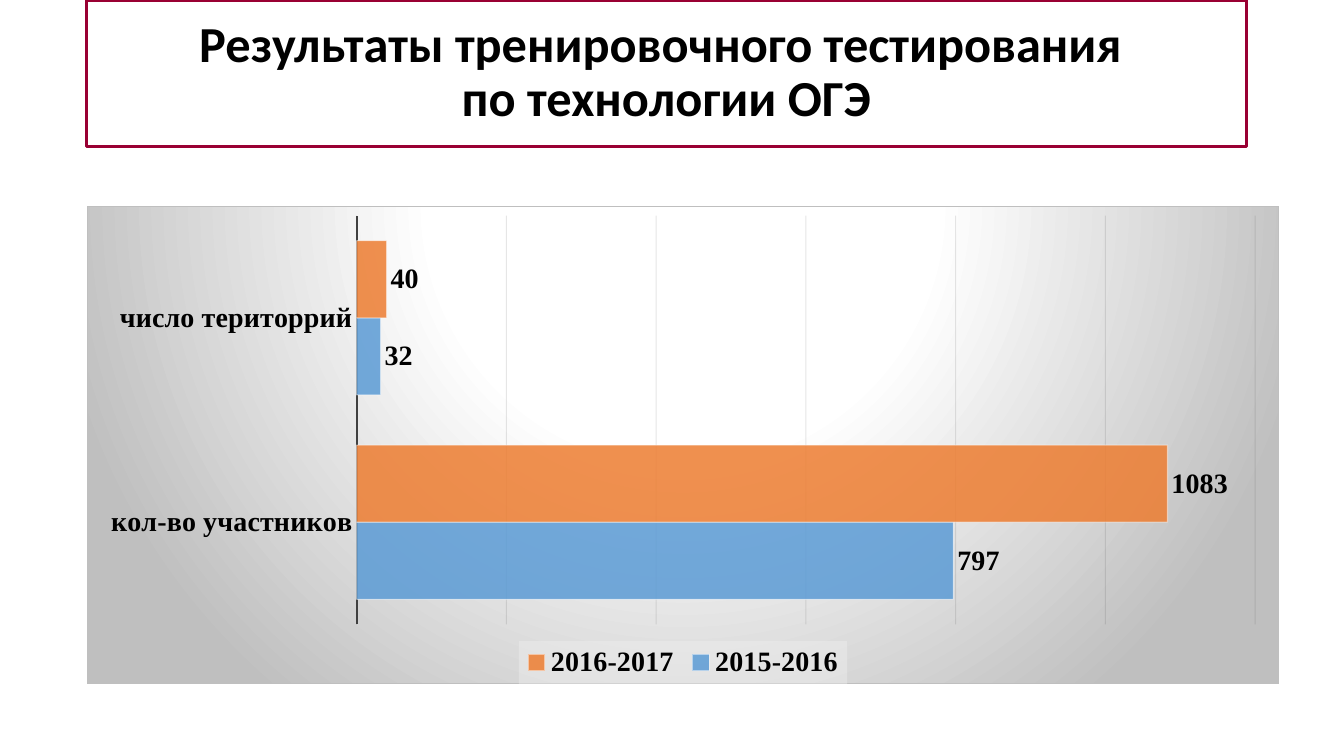
from lxml import etree
from pptx import Presentation
from pptx import util as u
from pptx.chart.data import CategoryChartData
from pptx.dml.color import RGBColor
from pptx.enum import chart as ch, text
from pptx.oxml import parse_xml
from pptx.oxml.ns import nsdecls, qn

BLACK = RGBColor(0x00, 0x00, 0x00)
WHITE = RGBColor(0xFF, 0xFF, 0xFF)
CRIMSON = RGBColor(0x99, 0x00, 0x33)
AXIS = RGBColor(0x40, 0x40, 0x40)
GRID = RGBColor(0x0D, 0x0D, 0x0D)
SILVER = RGBColor(0xBF, 0xBF, 0xBF)
PALE = RGBColor(0xF2, 0xF2, 0xF2)
BLUE = RGBColor(0x5B, 0x9B, 0xD5)
ORANGE = RGBColor(0xED, 0x7D, 0x31)

CHART_FONT = {"name": "Times New Roman", "size": u.Pt(20), "bold": True}
TITLE_FONT = {"name": "Calibri", "size": u.Pt(36), "bold": True}


def set_font(font, values):
    for key, value in values.items():
        setattr(font, key, value)
    font.color.rgb = BLACK


def set_alpha(parent, percent):
    """Make the solid colours under an XML element partly opaque."""
    for clr in parent.iter(qn("a:srgbClr")):
        etree.SubElement(clr, qn("a:alpha")).set("val", str(percent * 1000))


prs = Presentation()
prs.slide_width, prs.slide_height = u.Inches(13.33), u.Inches(7.5)
s = prs.slides.add_slide(prs.slide_layouts[5])
left = u.Inches(0.86)

# Title
sp = s.shapes.title
sp.left, sp.top, sp.width, sp.height = left, 0, u.Inches(11.5), u.Inches(1.45)
sp.line.color.rgb = CRIMSON
sp.line.width = u.Pt(2.25)
tf = sp.text_frame
tf.word_wrap = True
tf.auto_size = text.MSO_AUTO_SIZE.NONE
tf.vertical_anchor = text.MSO_ANCHOR.MIDDLE
p = tf.paragraphs[0]
p.text = "Результаты тренировочного тестирования \vпо технологии ОГЭ"
p.alignment = text.PP_ALIGN.CENTER
p.line_spacing = 0.9
for r in p.runs:
    set_font(r.font, TITLE_FONT)

# Chart
data = CategoryChartData()
data.categories = ["кол-во участников", "число територрий"]
data.add_series("2015-2016", (797, 32))
data.add_series("2016-2017", (1083, 40))
chart = s.shapes.add_chart(ch.XL_CHART_TYPE.BAR_CLUSTERED, left, u.Inches(2.04),
                           u.Inches(11.83), u.Inches(4.75), data).chart
chart.has_title = False
set_font(chart.font, CHART_FONT)

cat = chart.category_axis
cat.major_tick_mark = ch.XL_TICK_MARK.NONE
cat.format.line.color.rgb = AXIS
cat.format.line.width = u.Pt(1.5)
set_font(cat.tick_labels.font, CHART_FONT)

val = chart.value_axis
val.visible = False
val.minimum_scale, val.maximum_scale, val.major_unit = 0, 1200, 200
val.has_major_gridlines = True
grid = val.major_gridlines.format.line
grid.color.rgb = GRID
grid.width = u.Pt(0.75)
set_alpha(val.major_gridlines._xAx.find(qn("c:majorGridlines")), 10)

plot = chart.plots[0]
plot.gap_width, plot.overlap, plot.vary_by_categories = 65, 0, False
for ser, color in zip(plot.series, (BLUE, ORANGE)):
    ser.format.fill.solid()
    ser.format.fill.fore_color.rgb = color
    set_alpha(ser._element.spPr, 85)
    line = ser.format.line
    line.color.rgb = WHITE
    line.width = u.Pt(0.75)
    set_alpha(ser._element.spPr.find(qn("a:ln")), 50)
    labels = ser.data_labels
    labels.show_value = True
    labels.position = ch.XL_LABEL_POSITION.OUTSIDE_END
    set_font(labels.font, CHART_FONT)

chart.has_legend = True
legend = chart.legend
legend.position = ch.XL_LEGEND_POSITION.BOTTOM
legend.include_in_layout = False
set_font(legend.font, CHART_FONT)
legend_fill = parse_xml(
    f'<c:spPr {nsdecls("c", "a")}><a:solidFill><a:srgbClr val="{PALE}"/>'
    '</a:solidFill></c:spPr>')
set_alpha(legend_fill, 39)
legend._element.find(qn("c:overlay")).addnext(legend_fill)

# Radial background and border of the chart
stops = "".join(f'<a:gs pos="{pos * 1000}"><a:srgbClr val="{color}"/></a:gs>'
                for pos, color in ((0, WHITE), (39, WHITE), (100, SILVER)))
chart._chartSpace.find(qn("c:chart")).addnext(parse_xml(
    f'<c:spPr {nsdecls("c", "a")}><a:gradFill><a:gsLst>{stops}</a:gsLst>'
    '<a:path path="circle"><a:fillToRect l="50000" t="-80000" r="50000" b="180000"/>'
    f'</a:path></a:gradFill><a:ln w="{u.Pt(0.75)}"><a:solidFill>'
    f'<a:srgbClr val="{SILVER}"/></a:solidFill></a:ln></c:spPr>'))

prs.save("out.pptx")
